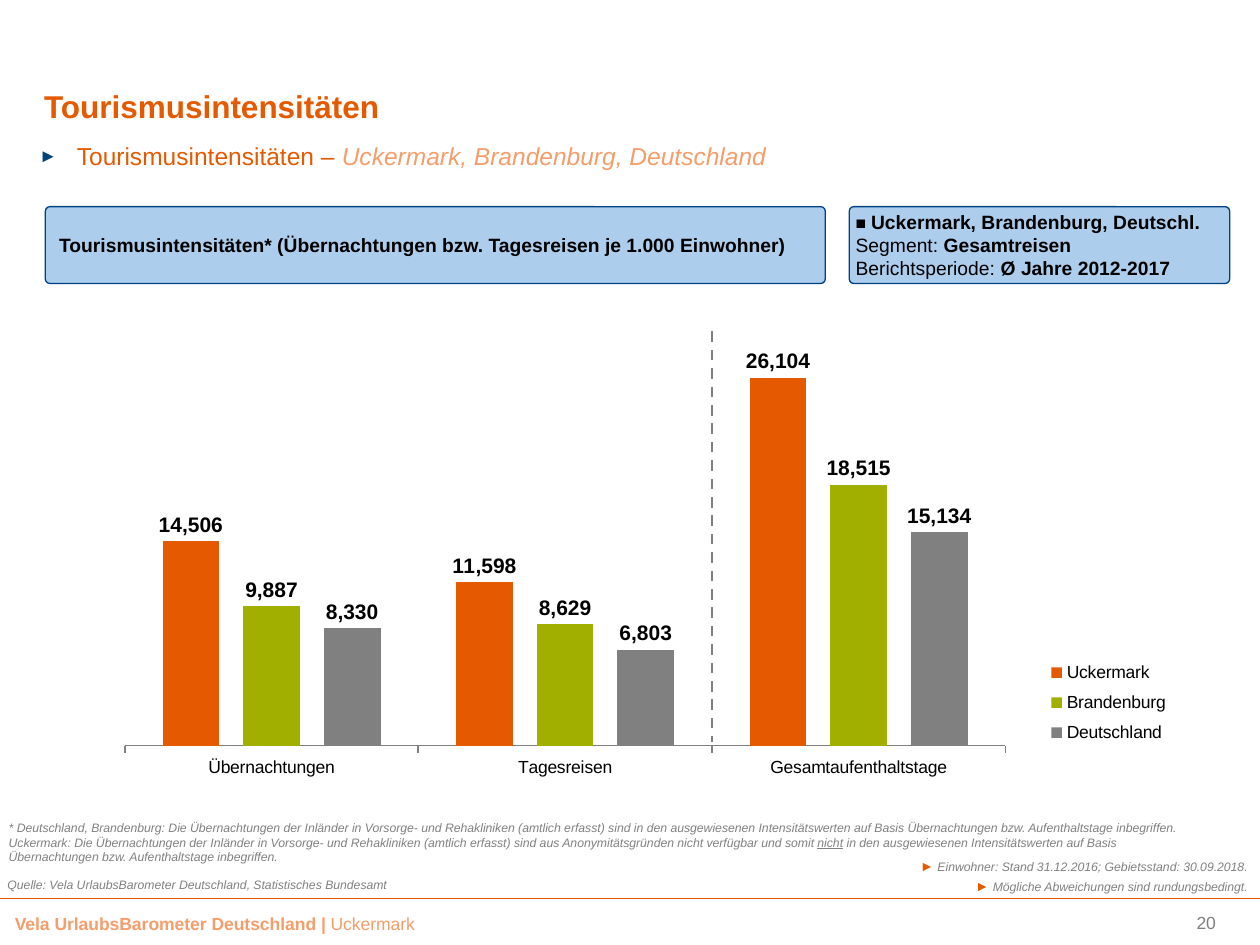
"""Build the slide on tourism intensity with its clustered column chart."""
from lxml.etree import SubElement
from pptx import Presentation
from pptx.chart.data import CategoryChartData
from pptx.dml.color import RGBColor
from pptx.enum.chart import XL_CHART_TYPE, XL_LABEL_POSITION, XL_LEGEND_POSITION, XL_TICK_LABEL_POSITION, XL_TICK_MARK
from pptx.enum.dml import MSO_LINE
from pptx.enum.shapes import MSO_CONNECTOR, MSO_SHAPE
from pptx.enum.text import MSO_ANCHOR, PP_ALIGN
from pptx.oxml import parse_xml
from pptx.oxml.ns import nsdecls, qn
from pptx.util import Pt

FONT = "Arial"
INK = {"orange": "E55A00", "peach": "F59D6B", "green": "A1AF00", "gray": "808080",
       "page": "7F7F7F", "black": "000000", "box": "ADCDED", "edge": "004186", "mark": "004178"}

CATS = ["Übernachtungen", "Tagesreisen", "Gesamtaufenthaltstage"]
SERIES = [("Uckermark", (14506, 11598, 26104), "orange"),
          ("Brandenburg", (9887, 8629, 18515), "green"),
          ("Deutschland", (8330, 6803, 15134), "gray")]

TITLE = [[("Tourismusintensitäten", 18, "orange", "b")]]
LEAD = [[("Tourismusintensitäten – ", 14, "orange", ""),
         ("Uckermark, Brandenburg, Deutschland", 14, "peach", "i")]]
TOPIC = [[("Tourismusintensitäten* (Übernachtungen bzw. Tagesreisen je 1.000 Einwohner)", 11, "black", "b")]]
SCOPE = [[("■ ", 10, "black", "b"), ("Uckermark, Brandenburg, Deutschl.", 11, "black", "b"), None,
          ("Segment: ", 11, "black", ""), ("Gesamtreisen", 11, "black", "b"), None,
          ("Berichtsperiode: ", 11, "black", ""), ("Ø Jahre 2012-2017", 11, "black", "b")]]
NOTE = [[("* Deutschland, Brandenburg: Die Übernachtungen der Inländer in Vorsorge- und Rehakliniken "
          "(amtlich erfasst) sind in den ausgewiesenen Intensitätswerten auf Basis Übernachtungen bzw. "
          "Aufenthaltstage inbegriffen. Uckermark: Die Übernachtungen der Inländer in Vorsorge- und "
          "Rehakliniken (amtlich erfasst) sind aus Anonymitätsgründen nicht verfügbar und somit ", 7, "gray", "i"),
         ("nicht", 7, "gray", "iu"),
         (" in den ausgewiesenen Intensitätswerten auf Basis Übernachtungen bzw. Aufenthaltstage "
          "inbegriffen.", 7, "gray", "i")]]
HINTS = [[("►", 8, "orange", "i"), (f" {hint}", 7, "gray", "i")] for hint in
         ("Einwohner: Stand 31.12.2016; Gebietsstand: 30.09.2018.", "Mögliche Abweichungen sind rundungsbedingt.")]
BRAND = "Vela UrlaubsBarometer Deutschland"
SOURCE = [[(f"Quelle: {BRAND}, Statistisches Bundesamt", 7, "gray", "i")]]
FOOTER = [[(f"{BRAND} | ", 10, "peach", "b"), ("Uckermark", 10, "peach", "")]]
PAGE = [[("20", 10, "page", "")]]


def tint(name):
    return RGBColor.from_string(INK[name])


def style(font, size, color="black", bold=False):
    font.name, font.size, font.bold = FONT, Pt(size), bold
    font.color.rgb = tint(color)


def write(shape, paras, pad, anchor=MSO_ANCHOR.TOP, align=PP_ALIGN.LEFT, gap=0):
    frame = shape.text_frame
    frame.word_wrap, frame.vertical_anchor = True, anchor
    frame.margin_left, frame.margin_top, frame.margin_right, frame.margin_bottom = map(Pt, pad)
    for i, runs in enumerate(paras):
        para = frame.add_paragraph() if i else frame.paragraphs[0]
        para.alignment = align
        if i:
            para.space_before = Pt(gap)
        for part in runs:
            if part is None:
                para.add_line_break()
                continue
            text, size, color, marks = part
            run = para.add_run()
            run.text = text
            style(run.font, size, color, "b" in marks)
            run.font.italic, run.font.underline = "i" in marks, "u" in marks
    return frame


def add_text(slide, spot, paras, pad=(0, 0, 0, 0), **more):
    return write(slide.shapes.add_textbox(*map(Pt, spot)), paras, pad, **more)


def add_box(slide, spot, paras, pad):
    box = slide.shapes.add_shape(MSO_SHAPE.ROUNDED_RECTANGLE, *map(Pt, spot))
    box.adjustments[0] = 0.06
    box.shadow.inherit = False
    box.fill.solid()
    box.fill.fore_color.rgb = tint("box")
    box.line.color.rgb, box.line.width = tint("edge"), Pt(0.75)
    write(box, paras, pad, MSO_ANCHOR.MIDDLE)


def add_line(slide, ends, color, width, dash=None):
    line = slide.shapes.add_connector(MSO_CONNECTOR.STRAIGHT, *map(Pt, ends))
    line.line.color.rgb, line.line.width = tint(color), Pt(width)
    if dash:
        line.line.dash_style = dash
    SubElement(line._element.spPr, qn("a:effectLst"))


def add_bullet(para):
    props = para._p.get_or_add_pPr()
    props.set("marL", str(Pt(21.6)))
    props.set("indent", str(-Pt(21.6)))
    color = SubElement(SubElement(props, qn("a:buClr")), qn("a:srgbClr"))
    color.set("val", INK["mark"])
    SubElement(props, qn("a:buSzPct")).set("val", "75000")
    SubElement(props, qn("a:buFont")).set("typeface", FONT)
    SubElement(props, qn("a:buChar")).set("char", "►")


def place(node, index, spot, inner=False):
    for old in node.findall(qn("c:layout")):
        node.remove(old)
    target = '<c:layoutTarget val="inner"/>' if inner else ""
    modes = "".join(f'<c:{k}Mode val="edge"/>' for k in "xy")
    sizes = "".join(f'<c:{k} val="{v}"/>' for k, v in zip("xywh", spot))
    node.insert(index, parse_xml(f'<c:layout {nsdecls("c")}><c:manualLayout>{target}{modes}{sizes}'
                                 '</c:manualLayout></c:layout>'))


def add_graph(slide, spot):
    data = CategoryChartData(number_format="#,##0")
    data.categories = CATS
    for name, vals, _ in SERIES:
        data.add_series(name, vals)
    chart = slide.shapes.add_chart(XL_CHART_TYPE.COLUMN_CLUSTERED, *map(Pt, spot), data).chart
    style(chart.font, 11)
    chart.has_title = False
    plot = chart.plots[0]
    plot.gap_width, plot.overlap, plot.vary_by_categories = 133, -42, False
    for bars, (_, _, color) in zip(plot.series, SERIES):
        bars.format.fill.solid()
        bars.format.fill.fore_color.rgb = tint(color)
        tags = bars.data_labels
        tags.show_value, tags.position = True, XL_LABEL_POSITION.OUTSIDE_END
        tags.number_format, tags.number_format_is_linked = "#,##0", False
        style(tags.font, 12, bold=True)
    scale, names = chart.value_axis, chart.category_axis
    scale.minimum_scale, scale.maximum_scale, scale.major_unit = 0, 30000, 5000
    scale.has_major_gridlines = scale.visible = False
    names.major_tick_mark, names.tick_label_position = XL_TICK_MARK.OUTSIDE, XL_TICK_LABEL_POSITION.LOW
    names.format.line.color.rgb, names.format.line.width = tint("gray"), Pt(1)
    style(names.tick_labels.font, 10)
    chart.has_legend = True
    key = chart.legend
    key.position, key.include_in_layout = XL_LEGEND_POSITION.RIGHT, False
    style(key.font, 10)
    place(chart._chartSpace.chart.plotArea, 0, (0.066, 0.067, 0.769, 0.799), True)
    place(key._element, 1, (0.86, 0.69, 0.13, 0.19))


def main():
    deck = Presentation()
    deck.slide_width, deck.slide_height = Pt(720), Pt(540)
    slide = deck.slides.add_slide(deck.slide_layouts[6])
    add_line(slide, (0, 513.4, 720, 513.4), "orange", 0.55)
    add_text(slide, (592.6, 521.3, 102.2, 11.5), PAGE, anchor=MSO_ANCHOR.MIDDLE, align=PP_ALIGN.RIGHT)
    add_text(slide, (1.4, 518.4, 484.6, 19.4), FOOTER, (7.2, 3.6, 7.2, 3.6))
    add_graph(slide, (28.1, 164.2, 654.5, 302.4))
    add_line(slide, (406.8, 189.4, 406.8, 424.1), "gray", 1.5, MSO_LINE.DASH)
    add_box(slide, (25.9, 118.1, 445.7, 43.9), TOPIC, (7.2, 3.6, 7.2, 3.6))
    add_box(slide, (485.3, 118.1, 217.4, 43.9), SCOPE, (2.9, 3.6, 0, 3.6))
    add_text(slide, (25.2, 20.2, 499, 51.1), TITLE, anchor=MSO_ANCHOR.BOTTOM)
    lead = add_text(slide, (22.3, 80.6, 668.9, 22.3), LEAD)
    add_bullet(lead.paragraphs[0])
    add_text(slide, (0, 465.1, 691.2, 32.4), NOTE, (5, 3.6, 7.2, 3.6))
    add_text(slide, (0, 497.5, 342.7, 16.6), SOURCE, (4.3, 3.6, 7.2, 3.6))
    add_text(slide, (328.3, 486.7, 391.7, 28), HINTS, (7.2, 3.6, 7.2, 3.6), align=PP_ALIGN.RIGHT, gap=1.6)
    deck.save("out.pptx")


if __name__ == "__main__":
    main()
